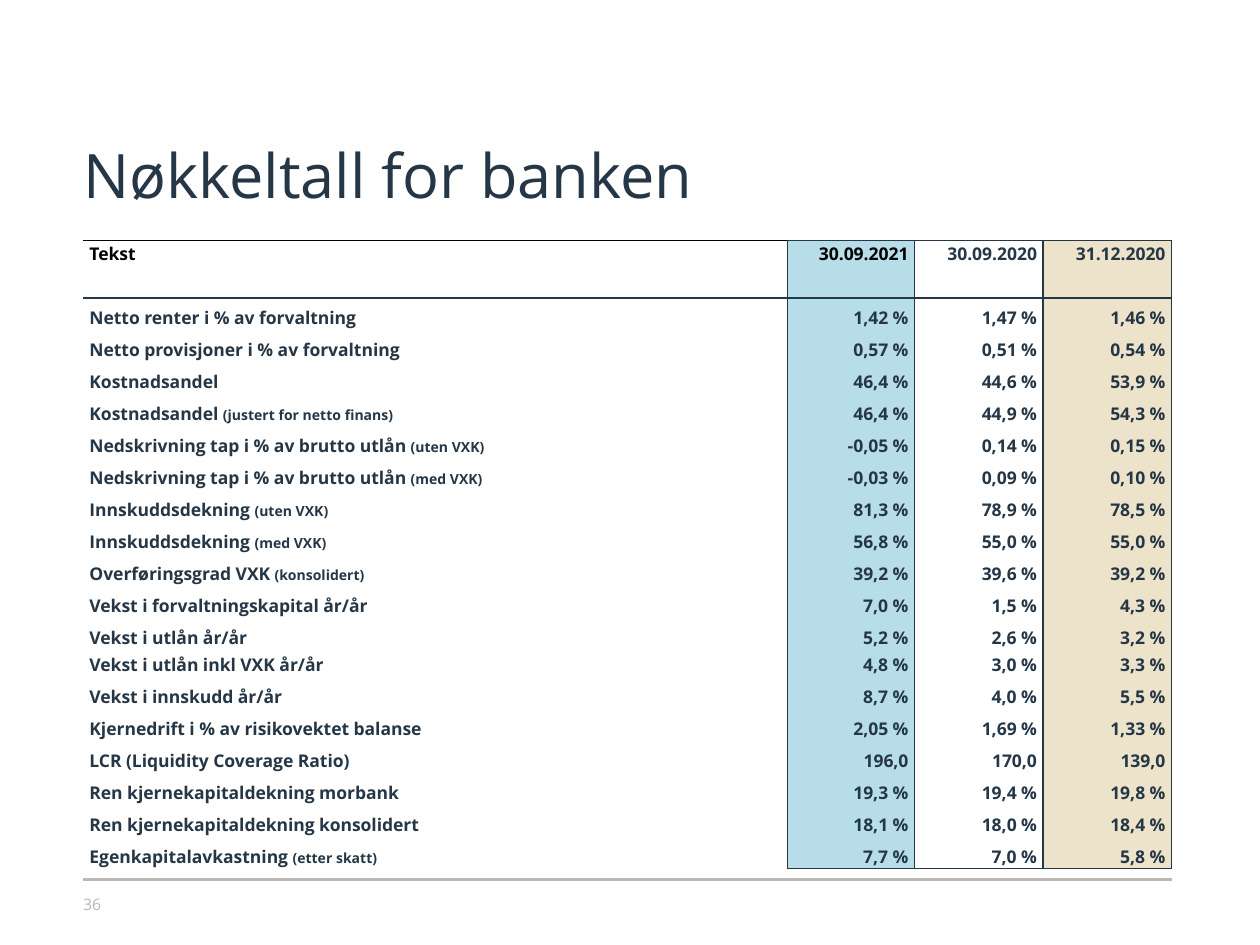
from lxml import etree
from pptx import Presentation, util as u
from pptx.dml.color import RGBColor
from pptx.enum import shapes, text
from pptx.oxml import ns

FONT = "Open Sans"
COLORS = {"navy": "253746", "black": "000000", "blue": "B6DDE8",
          "sand": "ECE3CA", "gray": "BEB8B4"}
COLUMN_FILLS = [None, "blue", None, "sand"]
COLUMN_WIDTHS = [5.59, 1.01, 1.02, 1.02]
ROW_HEIGHT = 18.3
SPECIAL_HEIGHTS = {0: 14.5, 13: 15.1, 16: 18.5}
HEADERS = ["Tekst", "30.09.2021", "30.09.2020", "31.12.2020"]
FIGURES = [
    ("Netto renter i % av forvaltning", "", "1,42 %", "1,47 %", "1,46 %"),
    ("Netto provisjoner i % av forvaltning", "", "0,57 %", "0,51 %", "0,54 %"),
    ("Kostnadsandel", "", "46,4 %", "44,6 %", "53,9 %"),
    ("Kostnadsandel ", "(justert for netto finans)", "46,4 %", "44,9 %", "54,3 %"),
    ("Nedskrivning tap i % av brutto utlån ", "(uten VXK)", "-0,05 %", "0,14 %", "0,15 %"),
    ("Nedskrivning tap i % av brutto utlån ", "(med VXK)", "-0,03 %", "0,09 %", "0,10 %"),
    ("Innskuddsdekning ", "(uten VXK)", "81,3 %", "78,9 %", "78,5 %"),
    ("Innskuddsdekning ", "(med VXK)", "56,8 %", "55,0 %", "55,0 %"),
    ("Overføringsgrad VXK ", "(konsolidert)", "39,2 %", "39,6 %", "39,2 %"),
    ("Vekst i forvaltningskapital år/år", "", "7,0 %", "1,5 %", "4,3 %"),
    ("Vekst i utlån år/år", "", "5,2 %", "2,6 %", "3,2 %"),
    ("Vekst i utlån inkl VXK år/år", "", "4,8 %", "3,0 %", "3,3 %"),
    ("Vekst i innskudd år/år", "", "8,7 %", "4,0 %", "5,5 %"),
    ("Kjernedrift i % av risikovektet balanse", "", "2,05 %", "1,69 %", "1,33 %"),
    ("LCR (Liquidity Coverage Ratio)", "", "196,0", "170,0", "139,0"),
    ("Ren kjernekapitaldekning morbank", "", "19,3 %", "19,4 %", "19,8 %"),
    ("Ren kjernekapitaldekning konsolidert", "", "18,1 %", "18,0 %", "18,4 %"),
    ("Egenkapitalavkastning ", "(etter skatt)", "7,7 %", "7,0 %", "5,8 %"),
]


def rgb(name):
    return RGBColor.from_string(COLORS[name])


def format_font(paragraph, size, color, bold=False):
    font = paragraph.font
    font.name, font.size, font.bold = FONT, u.Pt(size), bold
    font.color.rgb = rgb(color)


def clear_insets(frame):
    frame.margin_left = frame.margin_right = 0
    frame.margin_top = frame.margin_bottom = 0
    frame.word_wrap = True


def add_title(slide, box):
    title = slide.shapes.title
    title.left, title.top, title.width, title.height = box
    frame = title.text_frame
    clear_insets(frame)
    frame.auto_size = text.MSO_AUTO_SIZE.NONE
    frame.vertical_anchor = text.MSO_ANCHOR.BOTTOM
    frame.text = "Nøkkeltall for banken"
    paragraph = frame.paragraphs[0]
    paragraph.alignment = text.PP_ALIGN.LEFT
    format_font(paragraph, 35, "navy")


def set_borders(cell, edges):
    properties = cell._tc.get_or_add_tcPr()
    for index, side in enumerate("LRTB"):
        line = etree.Element(ns.qn(f"a:ln{side}"), w=str(u.Pt(1)))
        if side in edges:
            fill = etree.SubElement(line, ns.qn("a:solidFill"))
            etree.SubElement(fill, ns.qn("a:srgbClr"), val=COLORS[edges[side]])
        else:
            etree.SubElement(line, ns.qn("a:noFill"))
        properties.insert(index, line)


def cell_edges(row, column, last_row):
    edges = {"R": "navy"}
    if column:
        edges["L"] = "navy"
    if row == 0:
        edges["T"] = "navy" if column else "black"
    if row == 2:
        edges["T"] = "navy"
    if row == 1 or (row == last_row and column):
        edges["B"] = "navy"
    return edges


def fill_cell(cell, column, label, note, color):
    cell.margin_left = cell.margin_right = u.Inches(0.05)
    cell.margin_top = cell.margin_bottom = 0
    cell.vertical_anchor = text.MSO_ANCHOR.BOTTOM
    if COLUMN_FILLS[column]:
        cell.fill.solid()
        cell.fill.fore_color.rgb = rgb(COLUMN_FILLS[column])
    else:
        cell.fill.background()
    paragraph = cell.text_frame.paragraphs[0]
    paragraph.alignment = text.PP_ALIGN.RIGHT if column else text.PP_ALIGN.LEFT
    format_font(paragraph, 10, color, True)
    if label:
        paragraph.add_run().text = label
    else:
        etree.SubElement(paragraph._p, ns.qn("a:endParaRPr"), sz="1000")
    if note:
        run = paragraph.add_run()
        run.text = note
        run.font.size = u.Pt(8)


def add_figures_table(slide, box):
    rows = [[(header, "") for header in HEADERS], [("", "")] * len(HEADERS)]
    rows += [[(label, note)] + [(value, "") for value in values]
             for label, note, *values in FIGURES]
    table = slide.shapes.add_table(len(rows), len(HEADERS), *box).table
    table.first_row = table.horz_banding = False
    for column, share in zip(table.columns, COLUMN_WIDTHS):
        column.width = int(box[2] * share / sum(COLUMN_WIDTHS))
    for row, entries in enumerate(rows):
        table.rows[row].height = u.Pt(SPECIAL_HEIGHTS.get(row, ROW_HEIGHT))
        for column, (label, note) in enumerate(entries):
            cell = table.cell(row, column)
            color = "black" if row == 0 and column < 2 else "navy"
            fill_cell(cell, column, label, note, color)
            set_borders(cell, cell_edges(row, column, len(rows) - 1))


def add_footer(slide, box):
    left, top, width, height = box
    rule = slide.shapes.add_connector(
        shapes.MSO_CONNECTOR.STRAIGHT, left, top, left + width, top)
    rule.line.color.rgb = rgb("gray")
    rule.line.width = u.Pt(1.42)
    etree.SubElement(rule._element.spPr, ns.qn("a:effectLst"))
    number = slide.shapes.add_textbox(
        left, top + int(height * 0.36), int(width * 0.03), int(height * 0.64))
    frame = number.text_frame
    clear_insets(frame)
    frame.text = "36"
    format_font(frame.paragraphs[0], 9, "gray")


def main():
    presentation = Presentation()
    presentation.slide_width, presentation.slide_height = u.Inches(10), u.Inches(7.5)
    slide = presentation.slides.add_slide(presentation.slide_layouts[5])
    left, width = u.Inches(0.66), u.Inches(8.64)
    add_title(slide, (left, u.Inches(0.93), width, u.Inches(0.74)))
    add_figures_table(slide, (left, u.Inches(1.91), width, u.Inches(5)))
    add_footer(slide, (left, u.Inches(6.98), width, u.Inches(0.33)))
    presentation.save("out.pptx")


if __name__ == "__main__":
    main()
